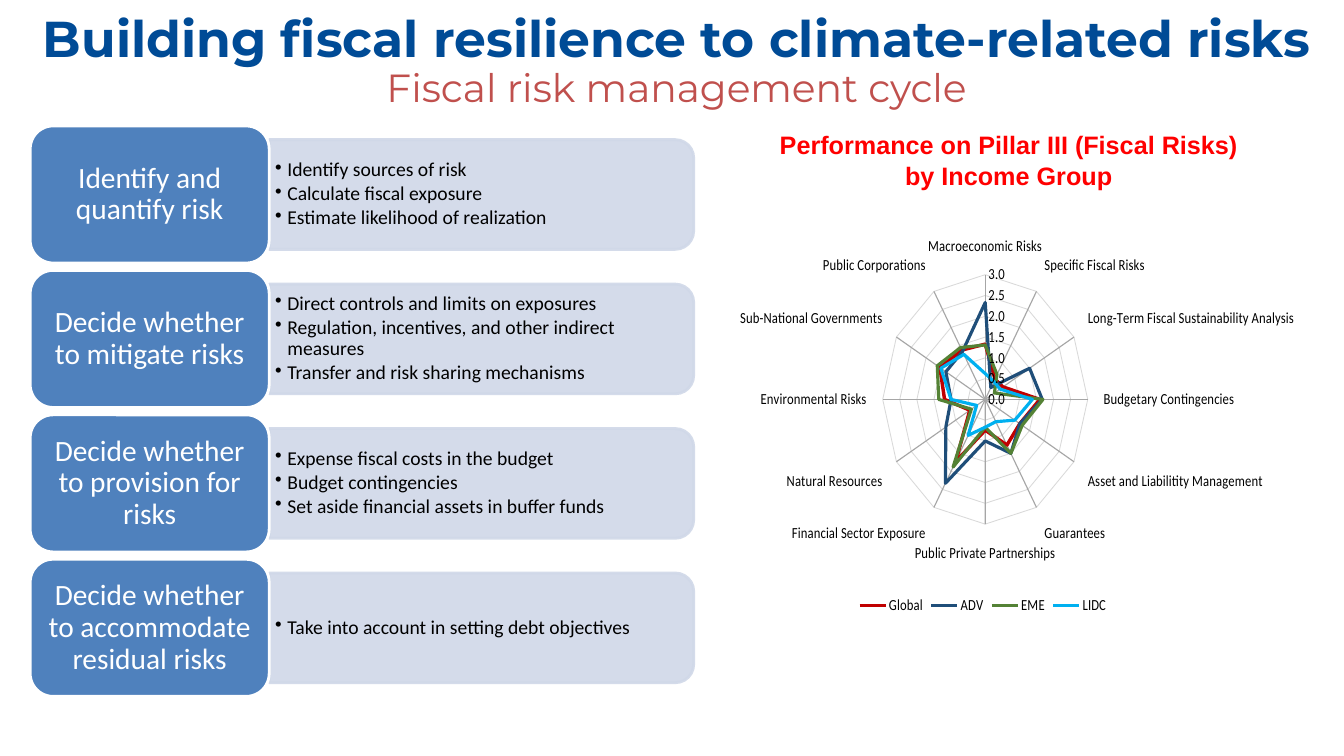
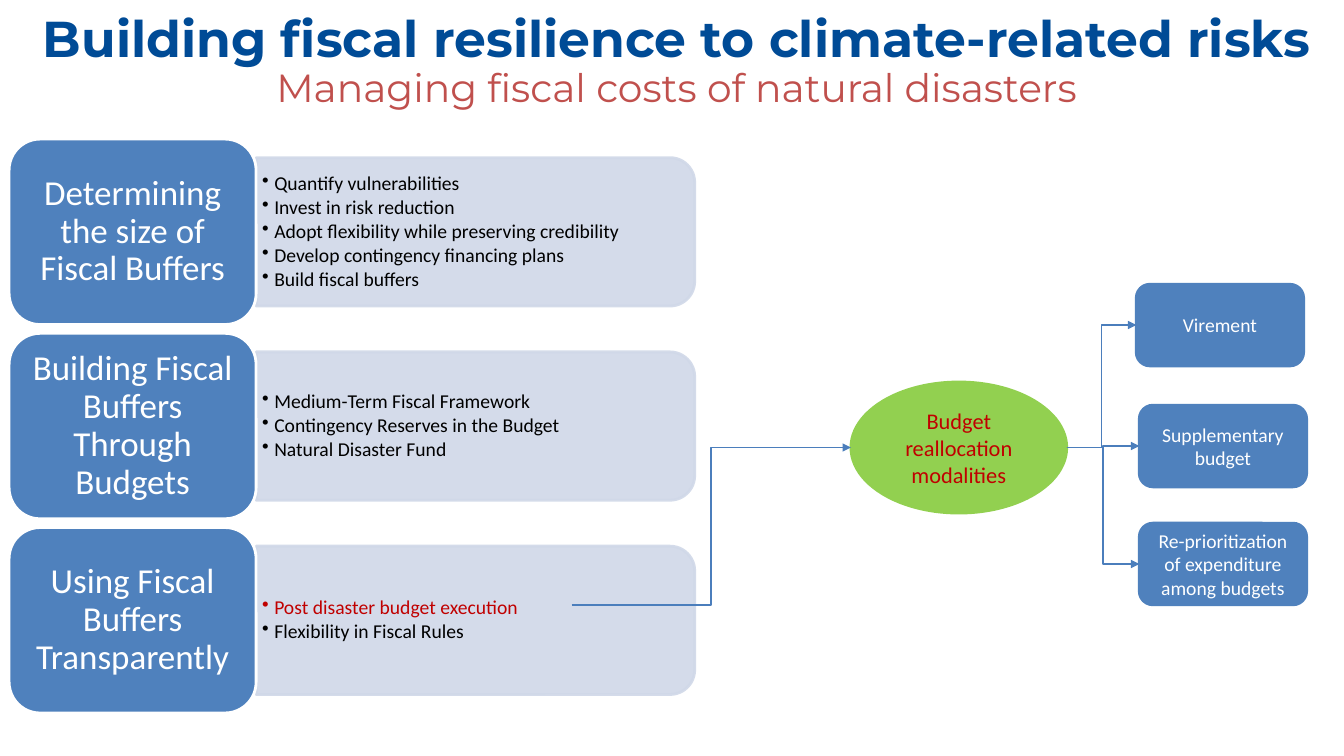
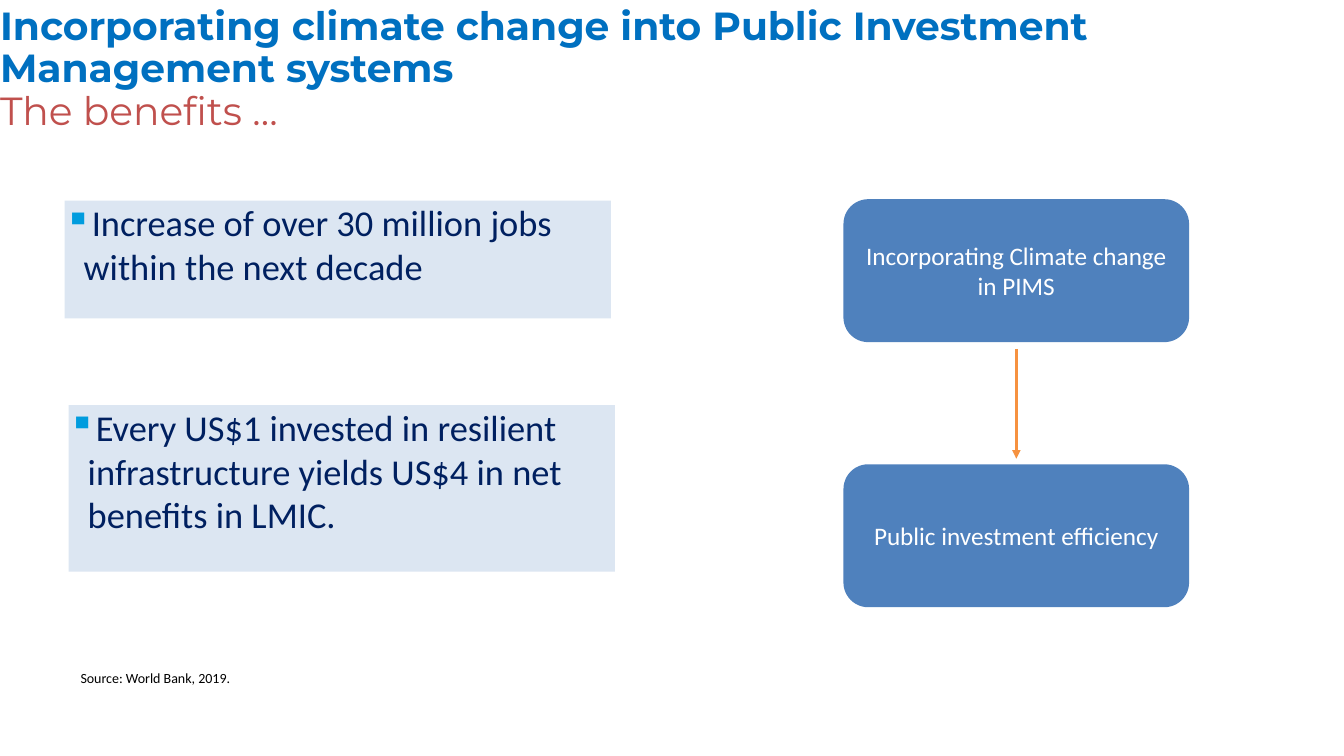
import dataclasses

import lxml.etree
import pptx
import pptx.chart.data
import pptx.dml.color
import pptx.enum.chart
import pptx.enum.shapes
import pptx.enum.text
import pptx.oxml
import pptx.oxml.ns
import pptx.util

Pt = pptx.util.Pt
qn = pptx.oxml.ns.qn
SHAPES = pptx.enum.shapes.MSO_SHAPE
CONNECTORS = pptx.enum.shapes.MSO_CONNECTOR
ALIGN = pptx.enum.text.PP_ALIGN
ANCHOR = pptx.enum.text.MSO_ANCHOR
FIT = pptx.enum.text.MSO_AUTO_SIZE

SLIDE_WIDTH = pptx.util.Inches(13.33)
SLIDE_HEIGHT = pptx.util.Inches(7.5)
GRID_ROWS = 75
CELL = SLIDE_HEIGHT / GRID_ROWS


@dataclasses.dataclass(frozen=True)
class Theme:
    heading_font: str = "Montserrat"
    body_font: str = "Calibri"
    chart_title_font: str = "Arial"
    navy: str = "004B96"
    sky: str = "0070C0"
    brick: str = "C0504D"
    box: str = "4F81BD"
    panel: str = "D0D8E8"
    pale: str = "DCE6F2"
    ink: str = "002060"
    bullet: str = "009CDE"
    green: str = "92D050"
    red: str = "C00000"
    bright_red: str = "FF0000"
    connector: str = "4B7EBC"
    orange: str = "F69240"
    grid: str = "D9D9D9"
    axis: str = "A6A6A6"
    white: str = "FFFFFF"
    black: str = "000000"
    title_size: int = 36
    subtitle_size: int = 28
    statement_size: int = 26
    box_size: int = 18
    oval_size: int = 16
    body_size: int = 14
    chart_size: int = 11
    source_size: int = 10


THEME = Theme()
LINE_BREAK = ("\n", {})


def cells(count):
    return round(count * CELL)


def rgb(value):
    return pptx.dml.color.RGBColor.from_string(value)


def style_font(font, size, color, name=THEME.body_font, bold=False):
    font.name, font.size, font.bold = name, Pt(size), bold
    font.color.rgb = rgb(color)


def add_bullet(paragraph, character, indent, color=None):
    properties = paragraph._p.get_or_add_pPr()
    properties.set("marL", str(cells(indent)))
    properties.set("indent", str(-cells(indent)))
    if color:
        holder = lxml.etree.SubElement(properties, qn("a:buClr"))
        lxml.etree.SubElement(holder, qn("a:srgbClr"), val=color)
    lxml.etree.SubElement(properties, qn("a:buChar"), char=character)


def write(shape, paragraphs, size=THEME.body_size, color=THEME.black, font=THEME.body_font,
          bold=False, align=ALIGN.LEFT, anchor=ANCHOR.MIDDLE, insets=(1, 0.5, 1, 0.5),
          spacing=None, before=0, after=0, bullet=None, fit=FIT.NONE):
    frame = shape.text_frame
    frame.word_wrap, frame.auto_size, frame.vertical_anchor = True, fit, anchor
    (frame.margin_left, frame.margin_top,
     frame.margin_right, frame.margin_bottom) = map(cells, insets)
    for index, content in enumerate(paragraphs):
        paragraph = frame.add_paragraph() if index else frame.paragraphs[0]
        paragraph.alignment, paragraph.line_spacing = align, spacing
        paragraph.space_before, paragraph.space_after = Pt(before), Pt(after)
        if bullet:
            add_bullet(paragraph, **bullet)
        for text, changes in [(content, {})] if isinstance(content, str) else content:
            if text == "\n":
                paragraph.add_line_break()
                continue
            run = paragraph.add_run()
            run.text = text
            base = {"size": size, "color": color, "name": font, "bold": bold}
            style_font(run.font, **{**base, **changes})


def add_text(slide, place, paragraphs, **text_format):
    shape = slide.shapes.add_textbox(*map(cells, place))
    write(shape, paragraphs, **text_format)
    return shape


def add_block(slide, kind, place, fill, outline=None, opacity=None):
    shape = slide.shapes.add_shape(kind, *map(cells, place))
    shape.shadow.inherit = False
    shape.fill.solid()
    shape.fill.fore_color.rgb = rgb(fill)
    if outline:
        shape.line.color.rgb = rgb(outline)
        shape.line.width = Pt(2)
    else:
        shape.line.fill.background()
    if opacity:
        for color in shape.element.spPr.iter(qn("a:srgbClr")):
            lxml.etree.SubElement(color, qn("a:alpha"), val=str(opacity * 1000))
    return shape


def add_box(slide, place, text, size):
    shape = add_block(slide, SHAPES.ROUNDED_RECTANGLE, place, THEME.box, THEME.box)
    write(shape, [text], size=size, color=THEME.white, align=ALIGN.CENTER)
    return shape


def add_arrow(slide, kind, start, end, color, width):
    connector = slide.shapes.add_connector(kind, *start, *end)
    connector.line.color.rgb = rgb(color)
    connector.line.width = Pt(width)
    properties = connector.element.spPr
    lxml.etree.SubElement(properties.find(qn("a:ln")), qn("a:tailEnd"), type="triangle")
    lxml.etree.SubElement(properties, qn("a:effectLst"))


def left_middle(shape):
    return shape.left, shape.top + shape.height // 2


def right_middle(shape):
    return shape.left + shape.width, shape.top + shape.height // 2


def add_slide(presentation, place, paragraphs, **text_format):
    slide = presentation.slides.add_slide(presentation.slide_layouts[5])
    title = slide.shapes.title
    title.left, title.top, title.width, title.height = map(cells, place)
    write(title, paragraphs, font=THEME.heading_font, bold=True, **text_format)
    return slide


def subtitle(text):
    return text, {"size": THEME.subtitle_size, "color": THEME.brick, "bold": False}


def add_resilience_slide(presentation, text):
    heading = ("Building fiscal resilience to climate-related risks", {})
    return add_slide(presentation, (0, 1.1, 134.2, 9.8), [[heading, LINE_BREAK, subtitle(text)]],
                     size=THEME.title_size, color=THEME.navy, align=ALIGN.CENTER,
                     insets=(0, 1.4, 0, 0), spacing=Pt(30.3), before=4.7,
                     fit=FIT.SHAPE_TO_FIT_TEXT)


def add_stages(slide, stages, left, top, label_width, panel_width, height, pitch, size):
    panel_height = 0.8 * height
    panel_left = left + label_width
    for index, (label, points) in enumerate(stages):
        row_top = top + index * pitch
        middle = row_top + height / 2
        panel = add_block(slide, SHAPES.ROUND_2_SAME_RECTANGLE,
                          (panel_left + (panel_width - panel_height) / 2,
                           middle - panel_width / 2, panel_height, panel_width),
                          THEME.panel, THEME.panel, opacity=90)
        panel.rotation = 90
        add_text(slide, (panel_left, middle - 0.45 * panel_height,
                         panel_width - 0.6, 0.9 * panel_height), points,
                 insets=(0.6, 0.3, 0.6, 0.3), spacing=0.9, after=2,
                 bullet={"character": "•", "indent": 1.2})
        box = add_block(slide, SHAPES.ROUNDED_RECTANGLE, (left, row_top, label_width, height),
                        THEME.box, THEME.white)
        write(box, [label], size=size, color=THEME.white, align=ALIGN.CENTER,
              insets=(0.9, 0.4, 0.9, 0.4), spacing=0.9)


def place_plot(chart, **shares):
    plot_area = chart.element.find(".//" + qn("c:plotArea"))
    for layout in plot_area.findall(qn("c:layout")):
        plot_area.remove(layout)
    layout = pptx.oxml.parse_xml(
        f"<c:layout {pptx.oxml.ns.nsdecls('c')}><c:manualLayout/></c:layout>")
    plot_area.insert(0, layout)
    settings = {"layoutTarget": "inner", "xMode": "edge", "yMode": "edge", **shares}
    for name, value in settings.items():
        lxml.etree.SubElement(layout[0], qn(f"c:{name}"), val=str(value))


def add_radar(slide, place, categories, series):
    data = pptx.chart.data.CategoryChartData(number_format="0.00")
    data.categories = categories
    for name, color, width, values in series:
        data.add_series(name, values)
    chart = slide.shapes.add_chart(pptx.enum.chart.XL_CHART_TYPE.RADAR,
                                   *map(cells, place), data).chart
    chart.has_title = False
    style_font(chart.font, THEME.chart_size, THEME.black)
    chart.has_legend = True
    chart.legend.position = pptx.enum.chart.XL_LEGEND_POSITION.BOTTOM
    chart.legend.include_in_layout = False
    style_font(chart.legend.font, THEME.chart_size, THEME.black)
    for axis, color in ((chart.category_axis, THEME.grid), (chart.value_axis, THEME.axis)):
        axis.major_tick_mark = axis.minor_tick_mark = pptx.enum.chart.XL_TICK_MARK.NONE
        axis.has_major_gridlines = True
        axis.major_gridlines.format.line.color.rgb = rgb(THEME.grid)
        axis.major_gridlines.format.line.width = Pt(0.75)
        axis.format.line.color.rgb = rgb(color)
        axis.format.line.width = Pt(1)
        style_font(axis.tick_labels.font, THEME.chart_size, THEME.black)
    scale = chart.value_axis
    scale.minimum_scale, scale.maximum_scale, scale.major_unit = 0, 3, 0.5
    scale.tick_labels.number_format = "0.0"
    scale.tick_labels.number_format_is_linked = False
    plot = chart.plots[0]
    plot.vary_by_categories = False
    for line, (name, color, width, values) in zip(plot.series, series):
        line.format.line.color.rgb = rgb(color)
        line.format.line.width = Pt(width)
    place_plot(chart, x=0.28, y=0.16, w=0.45, h=0.67)


def build_risk_cycle(presentation):
    slide = add_resilience_slide(presentation, "Fiscal risk management cycle")
    stages = [
        ("Identify and quantify risk",
         ["Identify sources of risk", "Calculate fiscal exposure",
          "Estimate likelihood of realization"]),
        ("Decide whether to mitigate risks",
         ["Direct controls and limits on exposures",
          "Regulation, incentives, and other indirect measures",
          "Transfer and risk sharing mechanisms"]),
        ("Decide whether to provision for risks",
         ["Expense fiscal costs in the budget", "Budget contingencies",
          "Set aside financial assets in buffer funds"]),
        ("Decide whether to accommodate residual risks",
         ["Take into account in setting debt objectives"]),
    ]
    add_stages(slide, stages, left=3, top=12.5, label_width=23.7, panel_width=42.1,
               height=13.6, pitch=14.33, size=21)
    categories = [
        "Macroeconomic Risks", "Specific Fiscal Risks",
        "Long-Term Fiscal Sustainability Analysis", "Budgetary Contingencies",
        "Asset and Liabilitity Management", "Guarantees", "Public Private Partnerships",
        "Financial Sector Exposure", "Natural Resources", "Environmental Risks",
        "Sub-National Governments", "Public Corporations",
    ]
    series = [
        ("Global", THEME.red, 3,
         [1.33, 0.57, 0.6, 1.6, 1.17, 1.27, 0.74, 1.73, 0.52, 1.19, 1.53, 1.37]),
        ("ADV", "1F4E79", 2.75,
         [2.33, 0.33, 1.5, 1.67, 1.17, 1.5, 1, 2.33, 1.33, 1, 1.33, 1.33]),
        ("EME", "548235", 2.75,
         [1.31, 0.69, 0.31, 1.69, 1.25, 1.5, 0.67, 1.88, 0.47, 1.36, 1.62, 1.44]),
        ("LIDC", "00B0F0", 2.75,
         [0.62, 0.5, 0.5, 1.38, 1, 0.62, 0.67, 1, 0.29, 1, 1.5, 1.25]),
    ]
    add_radar(slide, (73.4, 18.3, 55, 43.1), categories, series)
    add_text(slide, (74.1, 12.3, 51.9, 7.2),
             ["Performance on Pillar III (Fiscal Risks)", "by Income Group"],
             size=THEME.box_size, color=THEME.bright_red, font=THEME.chart_title_font,
             bold=True, align=ALIGN.CENTER, anchor=ANCHOR.TOP, before=0.9)


def build_disaster_costs(presentation):
    slide = add_resilience_slide(presentation, "Managing fiscal costs of natural disasters")
    stages = [
        ("Determining the size of Fiscal Buffers",
         ["Quantify vulnerabilities", "Invest in risk reduction",
          "Adopt flexibility while preserving credibility",
          "Develop contingency financing plans", "Build fiscal buffers"]),
        ("Building Fiscal Buffers Through Budgets",
         ["Medium-Term Fiscal Framework", "Contingency Reserves in the Budget",
          "Natural Disaster Fund"]),
        ("Using Fiscal Buffers Transparently",
         [[("Post disaster budget execution", {"color": THEME.red})],
          "Flexibility in Fiscal Rules"]),
    ]
    add_stages(slide, stages, left=0.9, top=13.8, label_width=24.5, panel_width=43.5,
               height=18.4, pitch=19.27, size=25)
    oval = add_block(slide, SHAPES.OVAL, (84.4, 37.9, 21.4, 13), THEME.green, THEME.green)
    write(oval, ["Budget reallocation modalities"], size=THEME.oval_size, color=THEME.red,
          align=ALIGN.CENTER)
    add_arrow(slide, CONNECTORS.ELBOW, (cells(56.7), cells(60)), left_middle(oval),
              THEME.connector, 1.25)
    modalities = [
        (112.7, 28.2, "Virement"),
        (113, 40.2, "Supplementary budget"),
        (113, 51.9, "Re-prioritization of expenditure among budgets"),
    ]
    for left, top, text in modalities:
        box = add_box(slide, (left, top, 16.6, 8.1), text, THEME.body_size)
        add_arrow(slide, CONNECTORS.ELBOW, right_middle(oval), left_middle(box),
                  THEME.connector, 1.25)


def build_benefits(presentation):
    heading = "Incorporating climate change into Public Investment Management systems"
    slide = add_slide(presentation, (0, 0, 134.8, 13.9), [heading, [subtitle("The benefits …")]],
                      size=THEME.subtitle_size, color=THEME.sky, insets=(0, 0, 0, 0),
                      spacing=0.9)
    add_text(slide, (0, 65.3, 30.8, 2.9), ["Source: World Bank, 2019."],
             size=THEME.source_size, align=ALIGN.CENTER, anchor=ANCHOR.TOP,
             insets=(0, 1.1, 0, 0), after=9)
    statements = [
        ((6.4, 19.9, 54.2, 11.7), "Increase of over 30 million jobs within the next decade"),
        ((6.8, 40.2, 54.2, 16.5), "Every US$1 invested in resilient infrastructure yields "
                                  "US$4 in net benefits in LMIC."),
    ]
    for place, text in statements:
        block = add_block(slide, SHAPES.RECTANGLE, place, THEME.pale)
        write(block, [text], size=THEME.statement_size, color=THEME.ink, anchor=ANCHOR.TOP,
              insets=(0, 0, 0, 0), after=9,
              bullet={"character": "▪", "indent": 1.9, "color": THEME.bullet})
    for top, text in ((19.9, "Incorporating Climate change in PIMS"),
                      (46.2, "Public investment efficiency")):
        add_box(slide, (83.8, top, 34, 13.9), text, THEME.box_size)
    add_arrow(slide, CONNECTORS.STRAIGHT, (cells(100.8), cells(34.6)),
              (cells(100.8), cells(45.5)), THEME.orange, 2)


def main():
    presentation = pptx.Presentation()
    presentation.slide_width = SLIDE_WIDTH
    presentation.slide_height = SLIDE_HEIGHT
    build_risk_cycle(presentation)
    build_disaster_costs(presentation)
    build_benefits(presentation)
    presentation.save("out.pptx")


if __name__ == "__main__":
    main()
